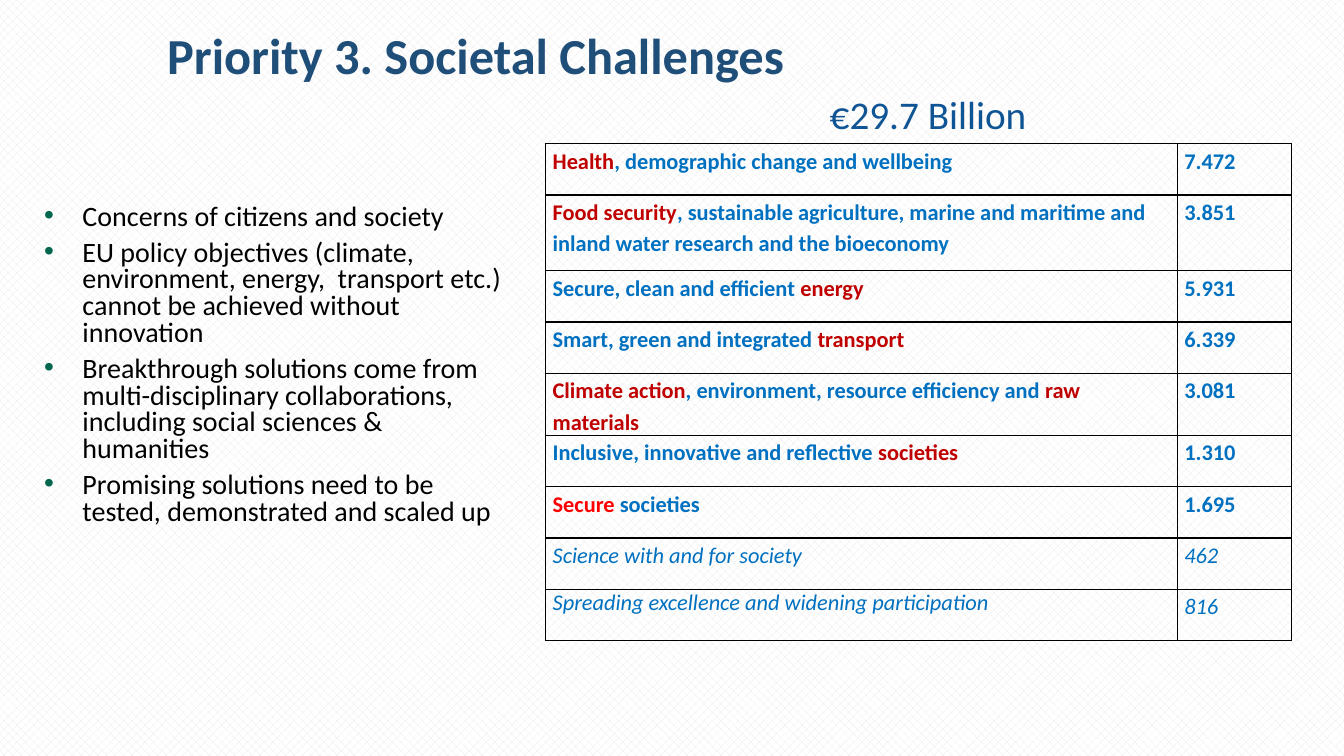
from lxml import etree
from pptx import Presentation
from pptx.dml.color import RGBColor
from pptx.enum.dml import MSO_PATTERN
from pptx.enum.text import MSO_ANCHOR
from pptx.oxml.ns import qn
from pptx.util import Inches, Pt

BACKDROP = MSO_PATTERN.from_xml("pct40")
TOP = MSO_ANCHOR.TOP

WHITE = RGBColor(0xFF, 0xFF, 0xFF)
PALE_GREY = RGBColor(0xE9, 0xE7, 0xE7)
BLACK = RGBColor(0x00, 0x00, 0x00)
NAVY = RGBColor(0x1F, 0x4E, 0x79)
EU_BLUE = RGBColor(0x0F, 0x54, 0x94)
BLUE = RGBColor(0x00, 0x70, 0xC0)
DARK_RED = RGBColor(0xC0, 0x00, 0x00)
RED = RGBColor(0xFF, 0x00, 0x00)
GREEN = RGBColor(0x00, 0x66, 0x4D)

FONT = "Calibri"
SLIDE_W, SLIDE_H = Inches(13.33), Inches(7.5)
HANG = Inches(0.38)
CELL_INSET = Inches(0.07)
BORDER_WIDTH = Pt(1)

REASONS = [
    "Concerns of citizens and society",
    "EU policy objectives (climate, environment, energy,  transport etc.) "
    "cannot be achieved without innovation",
    "Breakthrough solutions come from multi-disciplinary collaborations, "
    "including social sciences & humanities",
    "Promising solutions need to be tested, demonstrated and scaled up",
]

COLUMN_SHARES = (0.47, 0.085)
ROW_SHARE = 0.068
TALL_ROWS = {1: 0.1, 4: 0.076}
CHALLENGES = [
    ([("Health", DARK_RED), (", demographic change and wellbeing", BLUE)], "7.472"),
    ([("Food security", DARK_RED),
      (", sustainable agriculture, marine and maritime and inland water "
       "research and the bioeconomy", BLUE)], "3.851"),
    ([("Secure, clean and efficient ", BLUE), ("energy", DARK_RED)], "5.931"),
    ([("Smart, green and integrated ", BLUE), ("transport", DARK_RED)], "6.339"),
    ([("Climate action", DARK_RED),
      (", environment, resource efficiency and ", BLUE),
      ("raw materials", DARK_RED)], "3.081"),
    ([("Inclusive, innovative and reflective ", BLUE), ("societies", DARK_RED)], "1.310"),
    ([("Secure", RED), (" societies", BLUE)], "1.695"),
]
SIDE_PROGRAMMES = [
    ([("Science with and for society", BLUE)], "462"),
    ([("Spreading excellence and widening participation", BLUE)], "816"),
]


def across(share):
    return round(SLIDE_W * share)


def down(share):
    return round(SLIDE_H * share)


def style(run, size, color, bold=False, italic=False):
    run.font.name = FONT
    run.font.size = Pt(size)
    run.font.color.rgb = color
    run.font.bold = bold
    run.font.italic = italic


def add_text_frame(slide, left, top, width, height, wrap=True):
    box = slide.shapes.add_textbox(across(left), down(top), across(width), down(height))
    box.text_frame.word_wrap = wrap
    box.text_frame.vertical_anchor = TOP
    return box.text_frame


def add_line(slide, text, area, size, color, bold=False, wrap=True):
    frame = add_text_frame(slide, *area, wrap=wrap)
    frame.text = text
    style(frame.paragraphs[0].runs[0], size, color, bold)


def add_bullet(paragraph):
    props = paragraph._p.get_or_add_pPr()
    props.set("marL", str(HANG))
    props.set("indent", str(-HANG))
    tint = etree.SubElement(props, qn("a:buClr"))
    etree.SubElement(tint, qn("a:srgbClr"), val=str(GREEN))
    etree.SubElement(props, qn("a:buFont"), typeface="Arial")
    etree.SubElement(props, qn("a:buChar"), char="•")


def add_reasons(slide, area):
    frame = add_text_frame(slide, *area)
    frame.text = "\n".join(REASONS)
    for index, paragraph in enumerate(frame.paragraphs):
        add_bullet(paragraph)
        paragraph.line_spacing = 0.8
        paragraph.space_before = Pt(6 if index else 0)
        style(paragraph.runs[0], 20, BLACK)


def outline(cell):
    props = cell._tc.get_or_add_tcPr()
    for position, side in enumerate(("lnL", "lnR", "lnT", "lnB")):
        edge = etree.Element(qn(f"a:{side}"), w=str(BORDER_WIDTH))
        ink = etree.SubElement(edge, qn("a:solidFill"))
        etree.SubElement(ink, qn("a:srgbClr"), val=str(BLACK))
        props.insert(position, edge)


def fill_cell(cell, segments, main_challenge, line_spacing):
    cell.margin_left = cell.margin_right = CELL_INSET
    cell.margin_top = cell.margin_bottom = 0
    cell.vertical_anchor = TOP
    cell.fill.background()
    outline(cell)
    paragraph = cell.text_frame.paragraphs[0]
    paragraph.line_spacing = line_spacing
    for text, color in segments:
        run = paragraph.add_run()
        run.text = text
        style(run, 16, color, bold=main_challenge, italic=not main_challenge)


def add_budget(slide, left, top):
    entries = CHALLENGES + SIDE_PROGRAMMES
    row_shares = [TALL_ROWS.get(index, ROW_SHARE) for index in range(len(entries))]
    budget = slide.shapes.add_table(
        len(entries), len(COLUMN_SHARES), across(left), down(top),
        across(sum(COLUMN_SHARES)), down(sum(row_shares))).table
    budget.first_row = budget.horz_banding = False
    for column, share in zip(budget.columns, COLUMN_SHARES):
        column.width = across(share)
    for index, (topic, amount) in enumerate(entries):
        budget.rows[index].height = down(row_shares[index])
        main_challenge = index < len(CHALLENGES)
        topic_spacing = 1.0 if index == len(entries) - 1 else 1.15
        fill_cell(budget.cell(index, 0), topic, main_challenge, topic_spacing)
        fill_cell(budget.cell(index, 1), [(amount, BLUE)], main_challenge, 1.15)


def main():
    deck = Presentation()
    deck.slide_width, deck.slide_height = SLIDE_W, SLIDE_H
    slide = deck.slides.add_slide(deck.slide_layouts[6])
    backdrop = slide.background.fill
    backdrop.patterned()
    backdrop.pattern = BACKDROP
    backdrop.fore_color.rgb = PALE_GREY
    backdrop.back_color.rgb = WHITE

    add_line(slide, "Priority 3. Societal Challenges",
             (0.117, 0.025, 0.647, 0.11), 36, NAVY, bold=True)
    add_reasons(slide, (0.0255, 0.265, 0.363, 0.48))
    add_budget(slide, 0.406, 0.19)
    add_line(slide, "€29.7 Billion", (0.61, 0.113, 0.1635, 0.076), 28, EU_BLUE, wrap=False)
    deck.save("out.pptx")


if __name__ == "__main__":
    main()
